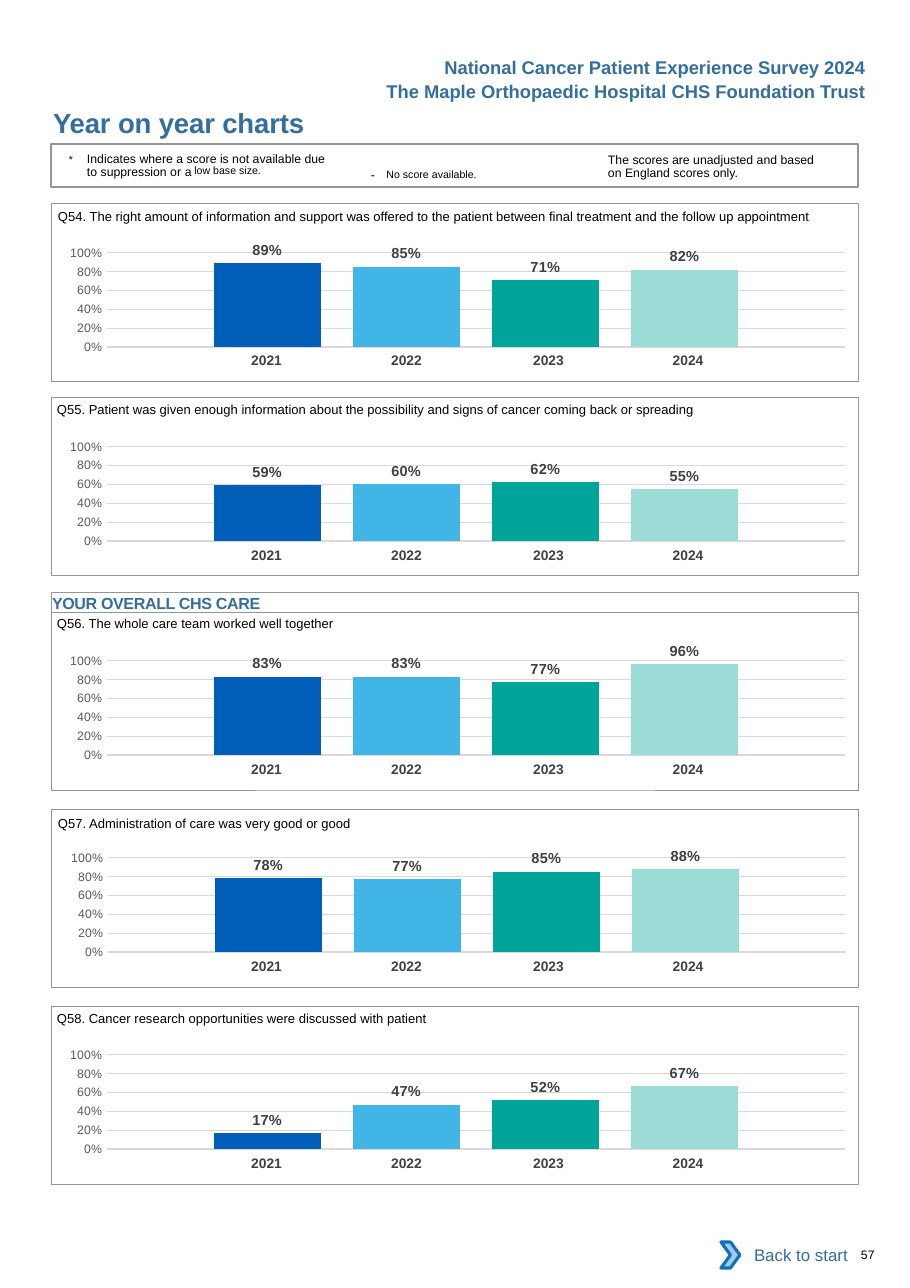
"""Build the survey page of year on year column charts."""
import pptx
import pptx.chart.data
import pptx.dml.color
import pptx.enum.chart
import pptx.enum.shapes
import pptx.enum.text
import pptx.oxml
import pptx.oxml.ns
import pptx.util

SCALE = 8298
BLUE, BLACK, EDGE = "336E9F", "000000", "939598"
LEFT, WIDE, TALL = 51, 807, 178
YEARS = ("2021", "2022", "2023", "2024")
FILLS = ("005EB8", "41B6E6", "00A499", "9CDCD7")
COLS = (140, 140, 148, 140)
PADS = (0, 0, 4, 13)
PANELS = (
    (203, 43, 232, 58, 198, (89, 85, 71, 82),
     "Q54. The right amount of information and support was offered to the patient "
     "between final treatment and the follow up appointment"),
    (397, 43, 426, 57, 391, (59, 60, 62, 55),
     "Q55. Patient was given enough information about the possibility and signs of "
     "cancer coming back or spreading"),
    (612, 43, 640, 57, 605, (83, 83, 77, 96),
     "Q56. The whole care team worked well together"),
    (809, 44, 837, 58, 805, (78, 77, 85, 88),
     "Q57. Administration of care was very good or good"),
    (1006, 43, 1034, 57, 1000, (17, 47, 52, 67),
     "Q58. Cancer research opportunities were discussed with patient"),
)
LAYOUT = (
    '<c:layout %s><c:manualLayout><c:layoutTarget val="inner"/>'
    '<c:xMode val="edge"/><c:yMode val="edge"/><c:x val="0.079"/>'
    '<c:y val="0.145"/><c:w val="0.915"/><c:h val="0.666"/>'
    '</c:manualLayout></c:layout>' % pptx.oxml.ns.nsdecls("c")
)


def px(*nums):
    """Turn px lengths into a list of EMU."""
    return [pptx.util.Emu(num * SCALE) for num in nums]


def tint(text):
    """Turn a hex string into a colour."""
    return pptx.dml.color.RGBColor.from_string(text)


def style(font, size, color, bold=False, face="Arial"):
    """Set size, colour, weight and face of a font."""
    font.size, font.bold, font.name = pptx.util.Pt(size), bold, face
    font.color.rgb = tint(color)


def write(frame, *runs, size=8, color=BLACK, bold=False, align="LEFT",
          line=None, hang=0):
    """Write runs, each a string or a (text, size, lift, space) tuple."""
    para = frame.paragraphs[0]
    para.alignment = getattr(pptx.enum.text.PP_ALIGN, align)
    if line:
        para.line_spacing = pptx.util.Pt(line)
    if hang:
        props = para._p.get_or_add_pPr()
        props.set("marL", str(hang * SCALE))
        props.set("indent", str(-hang * SCALE))
    for item in runs:
        text, points, lift, space = (item, size, 0, 0) if isinstance(item, str) else item
        run = para.add_run()
        run.text = text
        style(run.font, points, color, bold)
        if lift:
            run.font._element.set("baseline", str(lift * 1000))
        if space:
            run.font._element.set("spc", str(round(space * 100)))


def fit(frame, ins=(0, 0, 0, 0), anchor="TOP"):
    """Set wrap, insets and anchor of a text frame."""
    frame.word_wrap = True
    frame.auto_size = pptx.enum.text.MSO_AUTO_SIZE.NONE
    frame.margin_left, frame.margin_top, frame.margin_right, frame.margin_bottom = px(*ins)
    frame.vertical_anchor = getattr(pptx.enum.text.MSO_ANCHOR, anchor)
    return frame


def label(shapes, place, *runs, ins=(0, 0, 0, 0), **form):
    """Add a text box."""
    write(fit(shapes.add_textbox(*px(*place)).text_frame, ins), *runs, **form)


def block(shapes, place, kind="RECTANGLE", fill=None, line=None, width=0.5):
    """Add a preset shape."""
    shape = shapes.add_shape(getattr(pptx.enum.shapes.MSO_SHAPE, kind), *px(*place))
    shape.shadow.inherit = False
    if fill:
        shape.fill.solid()
        shape.fill.fore_color.rgb = tint(fill)
    else:
        shape.fill.background()
    if line:
        shape.line.color.rgb = tint(line)
        shape.line.width = pptx.util.Pt(width)
    else:
        shape.line.fill.background()
    return shape


def years(shapes, top):
    """Add the row of years below a chart."""
    table = shapes.add_table(1, len(COLS), *px(191, top, sum(COLS), 30)).table
    table.first_row = table.horz_banding = False
    for spot, (year, width, pad) in enumerate(zip(YEARS, COLS, PADS)):
        table.columns[spot].width = px(width)[0]
        cell = table.cell(0, spot)
        cell.fill.background()
        cell.margin_left, cell.margin_right = px(11, pad)
        write(cell.text_frame, year, size=9, color="414042", bold=True, align="CENTER")


def graph(shapes, left, top, scores):
    """Add a column chart of the scores."""
    data = pptx.chart.data.CategoryChartData(number_format="0%")
    data.categories = ["1"]
    for spot, score in enumerate(scores, 1):
        data.add_series(f"Series {spot}", [score / 100])
    kind = pptx.enum.chart.XL_CHART_TYPE.COLUMN_CLUSTERED
    chart = shapes.add_chart(kind, *px(left, top, WIDE, 142), data).chart
    style(chart.font, 10, BLACK, face="Calibri")
    chart.has_legend = chart.has_title = False
    chart.category_axis.visible = False
    axis = chart.value_axis
    axis.minimum_scale, axis.maximum_scale, axis.major_unit = 0, 1, 0.2
    axis.major_tick_mark = pptx.enum.chart.XL_TICK_MARK.NONE
    axis.format.line.fill.background()
    grid = axis.major_gridlines.format.line
    grid.color.rgb, grid.width = tint("D9D9D9"), pptx.util.Pt(0.75)
    axis.tick_labels.number_format = "0%"
    axis.tick_labels.number_format_is_linked = False
    style(axis.tick_labels.font, 8, "595959")
    plot = chart.plots[0]
    plot.gap_width, plot.overlap, plot.vary_by_categories = 200, -30, False
    for series, fill in zip(plot.series, FILLS):
        series.format.fill.solid()
        series.format.fill.fore_color.rgb = tint(fill)
        marks = series.data_labels
        marks.show_value = True
        marks.position = pptx.enum.chart.XL_LABEL_POSITION.OUTSIDE_END
        marks.number_format, marks.number_format_is_linked = "0%", False
        style(marks.font, 9.5, "404040", True)
    area = chart._chartSpace.chart.plotArea
    for old in area.findall(pptx.oxml.ns.qn("c:layout")):
        area.remove(old)
    area.insert(0, pptx.oxml.parse_xml(LAYOUT))


def panel(shapes, top, left, rise, start, head, scores, text):
    """Add a question with its chart, years and frame."""
    label(shapes, (start, head, 800, 26), text, ins=(0, 10, 0, 0), size=8.5)
    years(shapes, rise + 116)
    graph(shapes, left, rise, scores)
    block(shapes, (LEFT, top, WIDE, TALL), line=EDGE)


def notes(shapes):
    """Add the key to the scores."""
    label(shapes, (608, 152, 222, 30),
          "The scores are unadjusted and based on England scores only.",
          ins=(0, 3, 0, 0), line=8.1)
    label(shapes, (360, 155, 202, 26), ("- ", 8, 0, 2.6),
          ("No score available.", 12, 3, 0), ins=(11, 6, 11, 6))
    label(shapes, (69, 152, 264, 30), ("*\t", 12, 3, 0),
          "Indicates where a score is not available due to suppression or ",
          ("a ", 8, 0, -0.5), ("low base size.", 12, 7, 0),
          ins=(0, 3, 0, 0), line=8.1, hang=18)
    block(shapes, (LEFT, 144, WIDE, 43), line=EDGE, width=0.75)


def main():
    """Build and save the page."""
    deck = pptx.Presentation()
    deck.slide_width, deck.slide_height = px(910, 1288)
    page = deck.slides.add_slide(deck.slide_layouts[5])
    shapes = page.shapes
    title = shapes.title
    title.left, title.top, title.width, title.height = px(53, 106, 496, 33)
    write(fit(title.text_frame), ("Year on year charts", 18, 0, -0.1),
          color=BLUE, bold=True)
    for top, text in ((50, "National Cancer Patient Experience Survey 2024"),
                      (74, "The Maple Orthopaedic Hospital CHS Foundation Trust")):
        label(shapes, (360, top, 517, 33), text, ins=(11, 6, 11, 6),
              size=12, color=BLUE, bold=True, align="RIGHT")
    notes(shapes.add_group_shape().shapes)
    band = block(shapes, (LEFT, 592, WIDE, 20), line=EDGE)
    write(fit(band.text_frame, (1, 1, 0, 0)), ("YOUR OVERALL CHS CARE", 10.5, 0, -0.2),
          color=BLUE, bold=True)
    for item in PANELS:
        panel(shapes, *item)
    link = shapes.add_group_shape().shapes
    back = block(link, (729, 1232, 130, 46), fill="FFFFFF")
    write(fit(back.text_frame, (11, 6, 11, 6), "MIDDLE"), "Back to start",
          size=11, color=BLUE, align="RIGHT")
    block(link, (721, 1242, 19, 26), "CHEVRON", "A8C7E9", "0A74BB", 2)
    label(shapes, (861, 1247, 45, 15), "57")
    deck.save("out.pptx")


if __name__ == "__main__":
    main()
